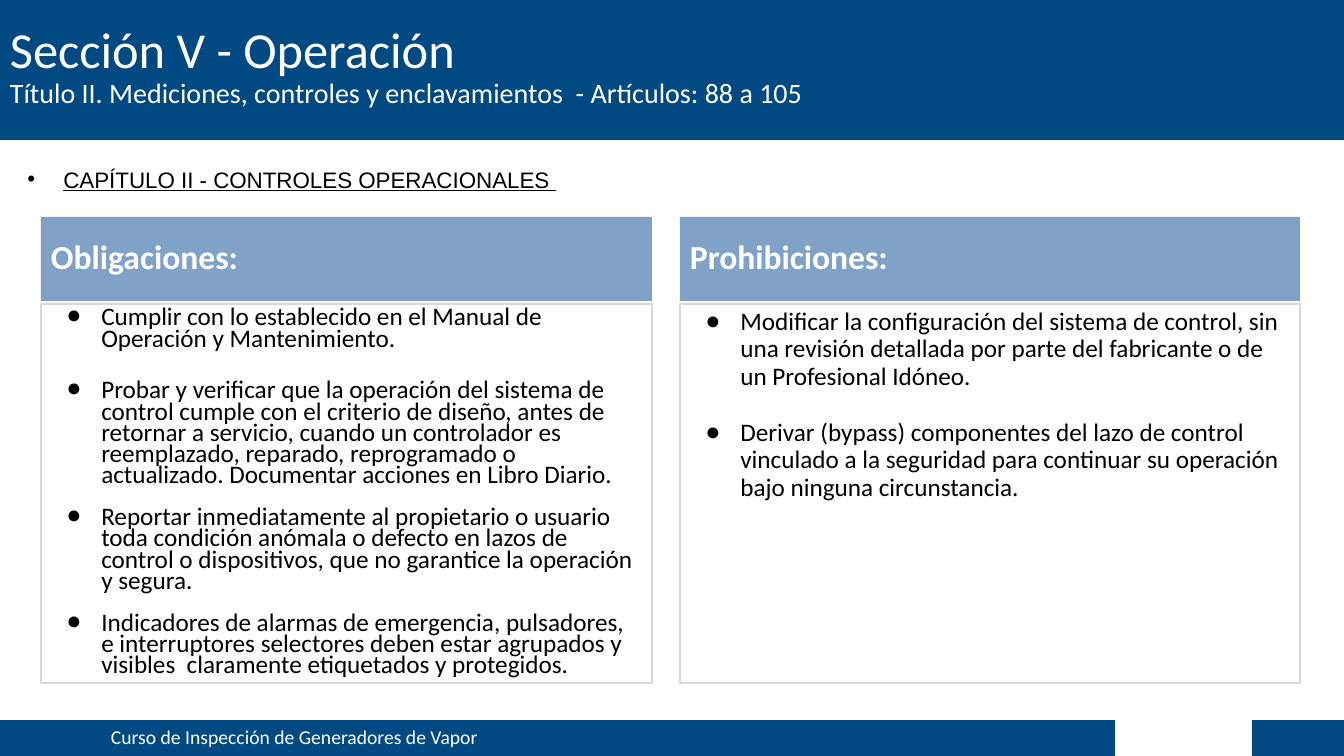
"""Build the slide on operational controls for steam generators."""
import lxml.etree
import pptx
import pptx.dml.color
import pptx.enum.shapes
import pptx.enum.text
import pptx.oxml.ns
import pptx.util

PX = 914400 / 100.8
NAVY = pptx.dml.color.RGBColor(0x00, 0x49, 0x82)
STEEL = pptx.dml.color.RGBColor(0x81, 0xA2, 0xC7)
GREY = pptx.dml.color.RGBColor(0xD8, 0xD8, 0xD8)
WHITE = pptx.dml.color.RGBColor(0xFF, 0xFF, 0xFF)
BLACK = pptx.dml.color.RGBColor(0x00, 0x00, 0x00)
ANCHOR = pptx.enum.text.MSO_ANCHOR
ALIGN = pptx.enum.text.PP_ALIGN

HEADER_TOP, HEADER_HEIGHT = 217, 84
BODY_TOP, BODY_HEIGHT = 304, 379
FOOTER_TOP, FOOTER_HEIGHT = 720, 36

DUTIES = [
    ("Cumplir con lo establecido en el Manual de Operación y Mantenimiento.", 0),
    ("Probar y verificar que la operación del sistema de control cumple con el "
     "criterio de diseño, antes de retornar a servicio, cuando un controlador es "
     "reemplazado, reparado, reprogramado o actualizado. Documentar acciones en "
     "Libro Diario.", 22),
    ("Reportar inmediatamente al propietario o usuario toda condición anómala o "
     "defecto en lazos de control o dispositivos, que no garantice la operación "
     "y segura.", 15),
    ("Indicadores de alarmas de emergencia, pulsadores, e interruptores selectores "
     "deben estar agrupados y visibles  claramente etiquetados y protegidos.", 15),
]
PROHIBITIONS = [
    ("Modificar la configuración del sistema de control, sin una revisión detallada "
     "por parte del fabricante o de un Profesional Idóneo.", 0),
    ("Derivar (bypass) componentes del lazo de control vinculado a la seguridad para "
     "continuar su operación bajo ninguna circunstancia.", 21),
]
COLUMNS = [
    (41, 611, "Obligaciones:", DUTIES, 0.7),
    (680, 620, "Prohibiciones:", PROHIBITIONS, 0.9),
]


def px(length):
    """Turn pixels into EMU."""
    return pptx.util.Emu(round(length * PX))


def add_box(slide, left, top, width, height, fill=None, line=None):
    """Add a rectangle with an optional fill and outline."""
    shape = slide.shapes.add_shape(
        pptx.enum.shapes.MSO_SHAPE.RECTANGLE, px(left), px(top), px(width), px(height))
    shape.shadow.inherit = False
    if fill is None:
        shape.fill.background()
    else:
        shape.fill.solid()
        shape.fill.fore_color.rgb = fill
    if line is None:
        shape.line.fill.background()
    else:
        shape.line.color.rgb = line
        shape.line.width = pptx.util.Pt(1.5)
    return shape


def prepare_frame(shape, anchor):
    """Set wrapping and anchoring and return the text frame."""
    frame = shape.text_frame
    frame.word_wrap = True
    frame.vertical_anchor = anchor
    return frame


def add_bullet(paragraph, character, indent):
    """Give a paragraph a hanging black bullet."""
    properties = paragraph._p.get_or_add_pPr()
    properties.set("marL", str(pptx.util.Inches(0.5)))
    properties.set("indent", str(-px(indent)))
    qn = pptx.oxml.ns.qn
    color = lxml.etree.SubElement(properties, qn("a:buClr"))
    lxml.etree.SubElement(color, qn("a:srgbClr")).set("val", str(BLACK))
    lxml.etree.SubElement(properties, qn("a:buFont")).set("typeface", "Arial")
    lxml.etree.SubElement(properties, qn("a:buChar")).set("char", character)


def write_paragraph(paragraph, text, size, color, spacing=0.9, font="Calibri",
                    alignment=ALIGN.LEFT):
    """Fill a paragraph and set its look."""
    paragraph.text = text
    paragraph.alignment = alignment
    paragraph.line_spacing = spacing
    paragraph.font.name = font
    paragraph.font.size = pptx.util.Pt(size)
    paragraph.font.color.rgb = color


def add_title(slide):
    """Add the title band with its two lines."""
    frame = prepare_frame(add_box(slide, 0, -6, 1344, 146, NAVY), ANCHOR.MIDDLE)
    write_paragraph(frame.paragraphs[0], "Sección V - Operación", 36, WHITE)
    write_paragraph(
        frame.add_paragraph(),
        "Título II. Mediciones, controles y enclavamientos  - Artículos: 88 a 105",
        20, WHITE)


def add_chapter(slide):
    """Add the underlined chapter line."""
    textbox = slide.shapes.add_textbox(px(3), px(157), px(1314), px(43))
    paragraph = prepare_frame(textbox, ANCHOR.TOP).paragraphs[0]
    add_bullet(paragraph, "•", 36)
    write_paragraph(paragraph, "CAPÍTULO II - CONTROLES OPERACIONALES ", 16, BLACK,
                    1.15, "Arial", ALIGN.JUSTIFY)
    paragraph.font.underline = True


def add_column(slide, left, width, heading, items, spacing):
    """Add a heading bar and the bulleted box below it."""
    header = add_box(slide, left, HEADER_TOP, width, HEADER_HEIGHT, STEEL)
    paragraph = prepare_frame(header, ANCHOR.MIDDLE).paragraphs[0]
    write_paragraph(paragraph, heading, 24, WHITE)
    paragraph.font.bold = True
    body = add_box(slide, left, BODY_TOP, width, BODY_HEIGHT, line=GREY)
    frame = prepare_frame(body, ANCHOR.TOP)
    for index, (text, gap) in enumerate(items):
        paragraph = frame.add_paragraph() if index else frame.paragraphs[0]
        add_bullet(paragraph, "●", 35)
        write_paragraph(paragraph, text, 18, BLACK, spacing)
        if gap:
            paragraph.space_before = pptx.util.Pt(gap)


def add_footer(slide):
    """Add the two footer bars and the course name."""
    bar = add_box(slide, 0, FOOTER_TOP, 1115, FOOTER_HEIGHT, NAVY)
    frame = prepare_frame(bar, ANCHOR.MIDDLE)
    frame.margin_left = px(111)
    write_paragraph(frame.paragraphs[0], "Curso de Inspección de Generadores de Vapor",
                    14, WHITE)
    add_box(slide, 1252, FOOTER_TOP, 92, FOOTER_HEIGHT, NAVY)


def main():
    """Build and save the presentation."""
    presentation = pptx.Presentation()
    presentation.slide_width, presentation.slide_height = px(1344), px(756)
    slide = presentation.slides.add_slide(presentation.slide_layouts[6])
    add_footer(slide)
    add_title(slide)
    add_chapter(slide)
    for column in COLUMNS:
        add_column(slide, *column)
    presentation.save("out.pptx")


if __name__ == "__main__":
    main()
